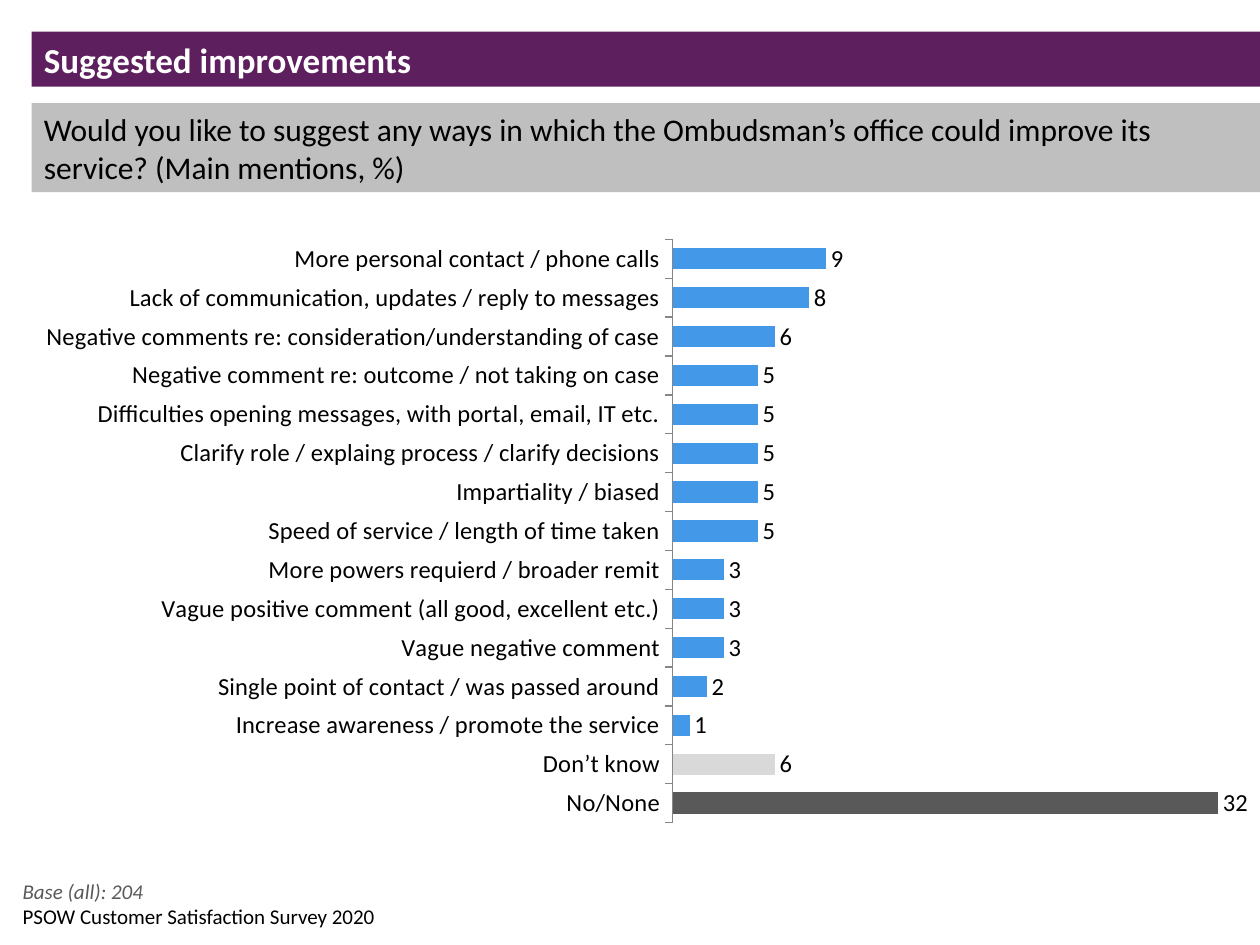
from dataclasses import dataclass

from pptx import Presentation
from pptx.chart.data import CategoryChartData
from pptx.dml.color import RGBColor
from pptx.enum.chart import XL_CHART_TYPE as ChartType
from pptx.enum.chart import XL_LABEL_POSITION as LabelPosition
from pptx.enum.chart import XL_TICK_MARK as TickMark
from pptx.enum.shapes import MSO_SHAPE as Shape
from pptx.enum.text import MSO_ANCHOR as Anchor
from pptx.enum.text import PP_ALIGN as Align
from pptx.oxml import parse_xml
from pptx.oxml.ns import nsdecls
from pptx.util import Pt


@dataclass(frozen=True)
class Theme:
    font: str = "Calibri"
    black: RGBColor = RGBColor(0, 0, 0)
    white: RGBColor = RGBColor(255, 255, 255)
    purple: RGBColor = RGBColor(0x5D, 0x1F, 0x5E)
    silver: RGBColor = RGBColor(0xBF, 0xBF, 0xBF)
    axis: RGBColor = RGBColor(0x86, 0x86, 0x86)
    blue: RGBColor = RGBColor(0x43, 0x99, 0xE7)
    pale: RGBColor = RGBColor(0xD9, 0xD9, 0xD9)
    dark: RGBColor = RGBColor(0x59, 0x59, 0x59)
    title: int = 20
    question: int = 18
    chart: int = 14
    note: int = 12


theme = Theme()


def write(shape, text, size, color, bold=False, italic=False):
    """Fill a shape with one left-aligned paragraph."""
    frame = shape.text_frame
    frame.word_wrap = True
    paragraph = frame.paragraphs[0]
    paragraph.alignment = Align.LEFT
    run = paragraph.add_run()
    run.text = text
    run.font.name = theme.font
    run.font.size = Pt(size)
    run.font.color.rgb = color
    run.font.bold = bold
    run.font.italic = italic


presentation = Presentation()
presentation.slide_width = Pt(720)
presentation.slide_height = Pt(540)
slide = presentation.slides.add_slide(presentation.slide_layouts[6])

# Title and question bands
question = ("Would you like to suggest any ways in which the Ombudsman’s office "
            "could improve its service? (Main mentions, %)")
bands = [
    (18, 31.5, theme.purple, "Suggested improvements", theme.title, theme.white, True),
    (59, 50.9, theme.silver, question, theme.question, theme.black, False),
]
for top, height, fill, text, size, color, bold in bands:
    band = slide.shapes.add_shape(Shape.RECTANGLE, Pt(18), Pt(top), Pt(702), Pt(height))
    band.shadow.inherit = False
    band.fill.solid()
    band.fill.fore_color.rgb = fill
    band.line.fill.background()
    band.text_frame.vertical_anchor = Anchor.MIDDLE
    write(band, text, size, color, bold)

# Base and survey name
notes = [
    (498.2, "Base (all): 204", theme.dark, True),
    (512.6, "PSOW Customer Satisfaction Survey 2020", theme.black, False),
]
for top, text, color, italic in notes:
    note = slide.shapes.add_textbox(Pt(5.8), Pt(top), Pt(522), Pt(21.8))
    write(note, text, theme.note, color, italic=italic)

# Bar chart of mentions
mentions = {
    "More personal contact / phone calls": 9,
    "Lack of communication, updates / reply to messages": 8,
    "Negative comments re: consideration/understanding of case": 6,
    "Negative comment re: outcome / not taking on case": 5,
    "Difficulties opening messages, with portal, email, IT etc.": 5,
    "Clarify role / explaing process / clarify decisions": 5,
    "Impartiality / biased": 5,
    "Speed of service / length of time taken": 5,
    "More powers requierd / broader remit": 3,
    "Vague positive comment (all good, excellent etc.)": 3,
    "Vague negative comment": 3,
    "Single point of contact / was passed around": 2,
    "Increase awareness / promote the service": 1,
    "Don’t know": 6,
    "No/None": 32,
}
chart_data = CategoryChartData()
chart_data.categories = list(mentions)
chart_data.add_series("Series 1", list(mentions.values()))
chart = slide.shapes.add_chart(
    ChartType.BAR_CLUSTERED, Pt(-144), Pt(126), Pt(876.2), Pt(360), chart_data
).chart
chart.has_legend = False
chart.has_title = False
chart.font.name = theme.font
chart.font.size = Pt(theme.chart)
chart.font.color.rgb = theme.black

category_axis = chart.category_axis
category_axis.reverse_order = True
category_axis.major_tick_mark = TickMark.OUTSIDE
category_axis.format.line.color.rgb = theme.axis
category_axis.format.line.width = Pt(0.75)
value_axis = chart.value_axis
value_axis.minimum_scale = 0
value_axis.maximum_scale = 35
value_axis.has_major_gridlines = False
value_axis.visible = False

plot = chart.plots[0]
plot.gap_width = 82
plot.vary_by_categories = False
plot.has_data_labels = True
labels = plot.data_labels
labels.show_value = True
labels.position = LabelPosition.OUTSIDE_END

series = plot.series[0]
series.format.fill.solid()
series.format.fill.fore_color.rgb = theme.blue
categories = list(mentions)
for category, color in [("Don’t know", theme.pale), ("No/None", theme.dark)]:
    fill = series.points[categories.index(category)].format.fill
    fill.solid()
    fill.fore_color.rgb = color

# Fixed inner plot area, as fractions of the chart
plot_area = chart.element.xpath("c:chart/c:plotArea")[0]
for layout in plot_area.xpath("c:layout"):
    plot_area.remove(layout)
fractions = "".join(
    f'<c:{name} val="{value}"/>'
    for name, value in [("x", 0.603), ("y", 0.03), ("w", 0.389), ("h", 0.926)]
)
plot_area.insert(0, parse_xml(
    f'<c:layout {nsdecls("c")}><c:manualLayout><c:layoutTarget val="inner"/>'
    f'<c:xMode val="edge"/><c:yMode val="edge"/>{fractions}</c:manualLayout></c:layout>'
))

presentation.save("out.pptx")
